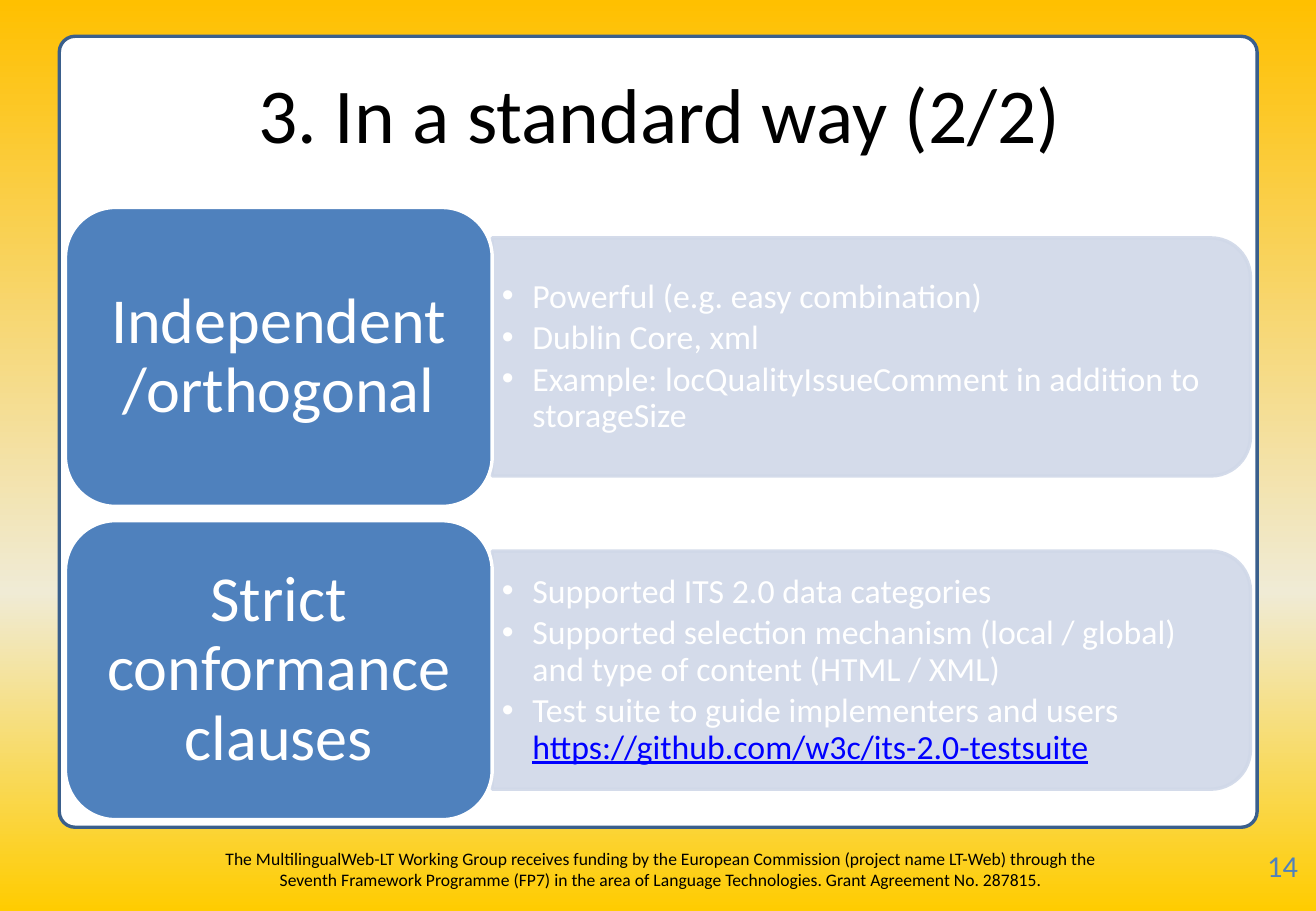
from copy import deepcopy

from lxml import etree
from pptx import Presentation
from pptx import util as u
from pptx.dml.color import RGBColor
from pptx.enum import shapes, text
from pptx.oxml.ns import qn

FUNDING = ("The MultilingualWeb-LT Working Group receives funding by the European Commission "
           "(project name LT-Web) through the Seventh Framework Programme (FP7) in the area of "
           "Language Technologies. Grant Agreement No. 287815.")
TOPICS = [
    ("Independent\v/orthogonal",
     ["Powerful (e.g. easy combination)",
      "Dublin Core, xml",
      "Example: locQualityIssueComment in addition to storageSize"], None),
    ("Strict conformance clauses",
     ["Supported ITS 2.0 data categories",
      "Supported selection mechanism (local / global) and type of content (HTML / XML)",
      "Test suite to guide implementers and users "],
     "https://github.com/w3c/its-2.0-testsuite"),
]
BLOCK_LEFT, BLOCK_TOP, BLOCK_WIDTH, BLOCK_HEIGHT = 1.37, 4.34, 8.92, 6.25
ROW_PITCH = 6.55
PANEL_LEFT, PANEL_WIDTH, PANEL_HEIGHT = 10.29, 15.85, 4.98
LIST_WIDTH, LIST_HEIGHT = 15.6, 4.5


def colour(value):
    return RGBColor.from_string(value)


def cm_all(*lengths):
    return [u.Cm(length) for length in lengths]


def make_translucent(fill_holder, percent):
    """Set the opacity of the solid fill directly inside the given element."""
    tint = fill_holder.find(qn("a:solidFill"))[0]
    etree.SubElement(tint, qn("a:alpha")).set("val", str(percent * 1000))


class SlideBuilder:
    font = "Calibri"
    black, white, blue = "000000", "FFFFFF", "4F81BD"
    outline, panel_tint, link = "3A5F8C", "D0D8E8", "0000FF"

    def __init__(self, page):
        self.page = page

    def background(self, stops):
        fill = self.page.background.fill
        fill.gradient()
        fill.gradient_angle = 270
        stop_list = self.page.element.xpath(".//a:gsLst")[0]
        while len(stop_list) < len(stops):
            stop_list.append(deepcopy(stop_list[0]))
        for stop, (position, value) in zip(fill.gradient_stops, stops):
            stop.position = position
            stop.color.rgb = colour(value)

    def style(self, para, size, value, align=None):
        para.font.name = self.font
        para.font.size = u.Pt(size)
        para.font.color.rgb = colour(value)
        para.alignment = align

    def frame_text(self, box, insets, anchor=text.MSO_ANCHOR.MIDDLE):
        frame = box.text_frame
        frame.word_wrap = True
        frame.auto_size = text.MSO_AUTO_SIZE.NONE
        frame.vertical_anchor = anchor
        frame.margin_left = frame.margin_right = u.Cm(insets[0])
        frame.margin_top = frame.margin_bottom = u.Cm(insets[1])
        return frame

    def shape(self, kind, place, fill, line):
        shape = self.page.shapes.add_shape(kind, *cm_all(*place))
        shape.shadow.inherit = False
        shape.fill.solid()
        shape.fill.fore_color.rgb = colour(fill)
        shape.line.color.rgb = colour(line)
        shape.line.width = u.Pt(2)
        return shape

    def placeholder(self, box, place):
        """Move a placeholder to its place, in front of everything drawn so far."""
        box.left, box.top, box.width, box.height = cm_all(*place)
        box.element.getparent().append(box.element)
        return box

    def title(self, wording, place):
        box = self.placeholder(self.page.shapes.title, place)
        frame = self.frame_text(box, (0.25, 0.13))
        frame.text = wording
        self.style(frame.paragraphs[0], 46, self.black, text.PP_ALIGN.CENTER)

    def label(self, wording, place, insets, size, value, align):
        box = self.page.shapes.add_textbox(*cm_all(*place))
        frame = self.frame_text(box, insets, text.MSO_ANCHOR.TOP)
        frame.text = wording
        self.style(frame.paragraphs[0], size, value, align)

    def panel(self, left, top, width, height):
        """Draw a panel rounded on its right side, by turning one rounded at the top."""
        shift = (width - height) / 2
        place = (left + shift, top - shift, height, width)
        panel = self.shape(shapes.MSO_SHAPE.ROUND_2_SAME_RECTANGLE, place,
                           self.panel_tint, self.panel_tint)
        panel.rotation = 90
        properties = panel.element.spPr
        make_translucent(properties, 90)
        make_translucent(properties.find(qn("a:ln")), 90)

    def bullets(self, box, place, items, link):
        frame = self.frame_text(self.placeholder(box, place), (0.2, 0.1))
        frame.text = "\n".join(items)
        for para in frame.paragraphs:
            properties = para._p.get_or_add_pPr()
            properties.set("marL", str(u.Cm(0.64)))
            properties.set("indent", str(-u.Cm(0.64)))
            para.line_spacing = 0.9
            para.space_before = u.Pt(0)
            para.space_after = u.Pt(3)
            self.style(para, 20, self.white)
        if link:
            span = frame.paragraphs[-1].add_run()
            span.text = link
            span.font.underline = True
            span.font.color.rgb = colour(self.link)

    def block(self, wording, place):
        block = self.shape(shapes.MSO_SHAPE.ROUNDED_RECTANGLE, place, self.blue, self.white)
        frame = self.frame_text(block, (0.41, 0.2))
        frame.text = wording
        para = frame.paragraphs[0]
        para.line_spacing = 0.9
        self.style(para, 38, self.white, text.PP_ALIGN.CENTER)


def main():
    deck = Presentation()
    deck.slide_width, deck.slide_height = cm_all(27.51, 19.05)
    page = deck.slides.add_slide(deck.slide_layouts.get_by_name("Two Content"))
    builder = SlideBuilder(page)
    lists = [box for box in page.placeholders if box.placeholder_format.idx > 0]

    builder.background([(0, "FFC000"), (0.65, "F0EBD5"), (1, "FFCC00")])
    card = builder.shape(shapes.MSO_SHAPE.ROUNDED_RECTANGLE, (1.24, 0.76, 25.04, 16.54),
                         builder.white, builder.outline)
    card.adjustments[0] = 0.02
    builder.label(FUNDING, (4.11, 17.6, 19.41, 1.02), (0.25, 0.13), 10.4, builder.black,
                  text.PP_ALIGN.CENTER)
    builder.title("3. In a standard way (2/2)", (1.3, 0.76, 24.97, 3.18))

    for row, (box, (heading, items, link)) in enumerate(zip(lists, TOPICS)):
        top = BLOCK_TOP + row * ROW_PITCH
        panel_top = top + (BLOCK_HEIGHT - PANEL_HEIGHT) / 2
        list_top = top + (BLOCK_HEIGHT - LIST_HEIGHT) / 2
        builder.panel(PANEL_LEFT, panel_top, PANEL_WIDTH, PANEL_HEIGHT)
        builder.bullets(box, (PANEL_LEFT, list_top, LIST_WIDTH, LIST_HEIGHT), items, link)
        builder.block(heading, (BLOCK_LEFT, top, BLOCK_WIDTH, BLOCK_HEIGHT))

    builder.label("14", (26.44, 17.68, 1.06, 1.02), (0.05, 0.03), 18, builder.blue,
                  text.PP_ALIGN.LEFT)
    deck.save("out.pptx")


if __name__ == "__main__":
    main()
